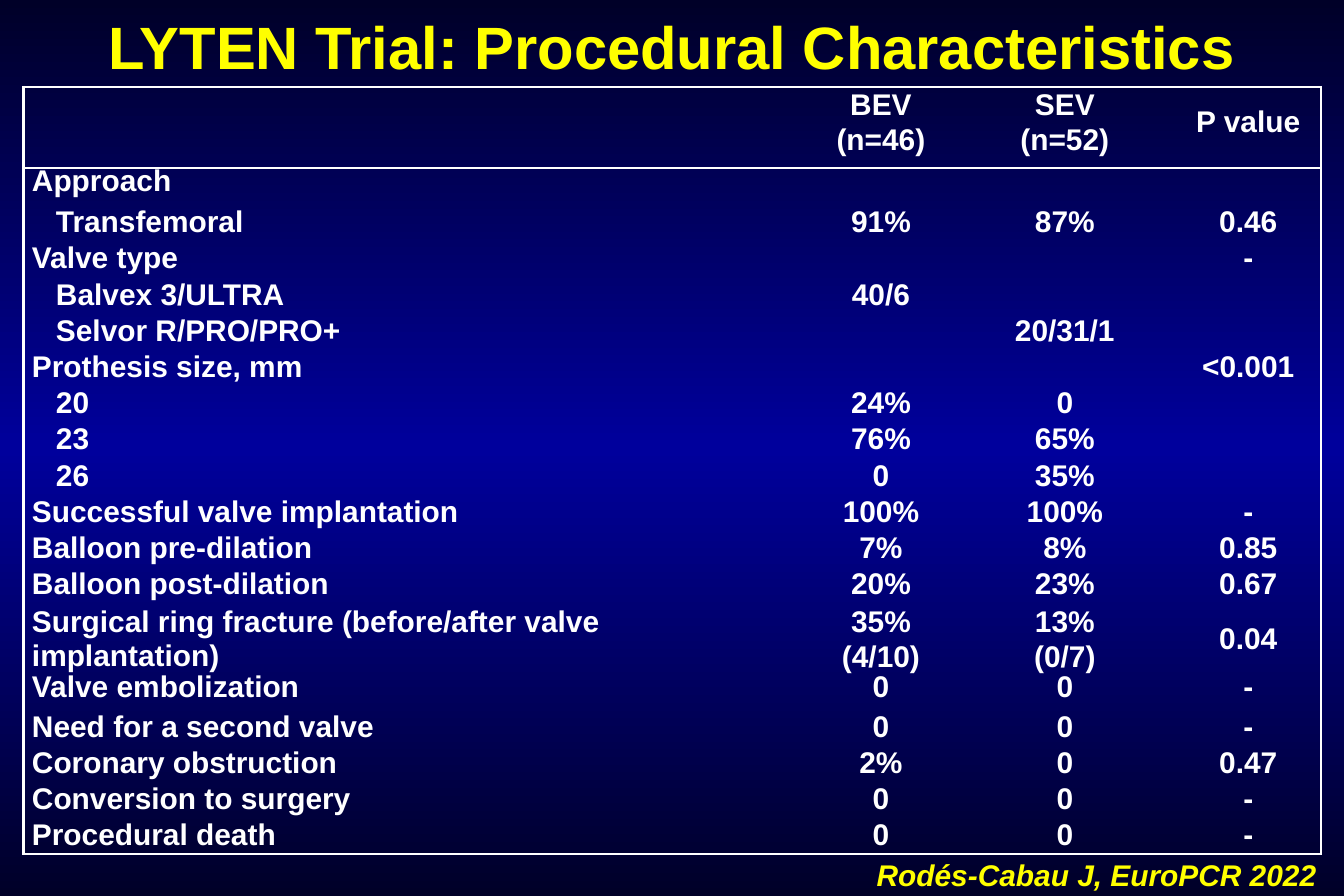
from copy import deepcopy

from lxml import etree
from pptx import Presentation
from pptx.dml.color import RGBColor
from pptx.enum.text import MSO_ANCHOR, PP_ALIGN
from pptx.oxml.ns import qn
from pptx.util import Cm, Pt

LEFT, CENTER = PP_ALIGN.LEFT, PP_ALIGN.CENTER
MIDDLE = MSO_ANCHOR.MIDDLE

TITLE = "LYTEN Trial: Procedural Characteristics"
CITATION = "Rodés-Cabau J, EuroPCR 2022"
HEADER = ("", "BEV\n(n=46)", "SEV\n(n=52)", "P value")
GROUP, ITEM = 0.18, 0.69  # label indents in cm
CHARACTERISTICS = [
    (GROUP, "Approach", "", "", ""),
    (ITEM, "Transfemoral", "91%", "87%", "0.46"),
    (GROUP, "Valve type", "", "", "-"),
    (ITEM, "Balvex 3/ULTRA", "40/6", "", ""),
    (ITEM, "Selvor R/PRO/PRO+", "", "20/31/1", ""),
    (GROUP, "Prothesis size, mm", "", "", "<0.001"),
    (ITEM, "20", "24%", "0", ""),
    (ITEM, "23", "76%", "65%", ""),
    (ITEM, "26", "0", "35%", ""),
    (GROUP, "Successful valve implantation", "100%", "100%", "-"),
    (GROUP, "Balloon pre-dilation", "7%", "8%", "0.85"),
    (GROUP, "Balloon post-dilation", "20%", "23%", "0.67"),
    (GROUP, "Surgical ring fracture (before/after valve implantation)",
     "35%\n(4/10)", "13%\n(0/7)", "0.04"),
    (GROUP, "Valve embolization", "0", "0", "-"),
    (GROUP, "Need for a second valve", "0", "0", "-"),
    (GROUP, "Coronary obstruction", "2%", "0", "0.47"),
    (GROUP, "Conversion to surgery", "0", "0", "-"),
    (GROUP, "Procedural death", "0", "0", "-"),
]
COLUMN_WIDTHS = (15.04, 4.75, 4.52, 3.28)
VALUE_INDENTS = (1.63, 0.18, 0.18)
ROW_HEIGHT = 0.77
SPECIAL_HEIGHTS = {"": 1.72, "Surgical": 1.53, "Valve embolization": 0.7}
TIGHT_ROWS = ("", "Approach", "Valve embolization")
YELLOW, WHITE = "FFFF00", "FFFFFF"
NAVY, BLUE = "000028", "00009C"


def rgb(code):
    return RGBColor.from_string(code)


def style(paragraph, size, color, align, italic=False):
    paragraph.alignment = align
    font = paragraph.font
    font.name, font.size, font.bold, font.italic = "Arial", Pt(size), True, italic
    font.color.rgb = rgb(color)


def add_line(slide, text, box, size, align, italic=False):
    """Add a one-paragraph yellow text box."""
    frame = slide.shapes.add_textbox(*(Cm(length) for length in box)).text_frame
    frame.word_wrap = True
    frame.text = text
    style(frame.paragraphs[0], size, YELLOW, align, italic)


def paint_background(slide):
    fill = slide.background.fill
    fill.gradient()
    fill.gradient_angle = 90
    stop_list = next(slide.element.iter(qn("a:gsLst")))
    stop_list.insert(1, deepcopy(stop_list[0]))
    for stop, position, color in zip(fill.gradient_stops, (0, 0.5, 1), (NAVY, BLUE, NAVY)):
        stop.position = position
        stop.color.rgb = rgb(color)


def set_borders(cell, drawn):
    """Draw the named sides (L, R, T, B) in white and clear the others."""
    properties = cell._tc.get_or_add_tcPr()
    for place, side in enumerate("LRTB"):
        line = etree.Element(qn(f"a:ln{side}"), w=str(Pt(1.5)))
        if side in drawn:
            solid = etree.SubElement(line, qn("a:solidFill"))
            etree.SubElement(solid, qn("a:srgbClr"), val=WHITE)
        else:
            etree.SubElement(line, qn("a:noFill"))
        properties.insert(place, line)


def fill_cell(cell, text, indent, align, tight):
    cell.fill.background()
    cell.margin_left = cell.margin_right = cell.margin_top = cell.margin_bottom = 0
    cell.vertical_anchor = MIDDLE
    cell.text = text
    for number, paragraph in enumerate(cell.text_frame.paragraphs):
        paragraph._p.get_or_add_pPr().set("marL", str(Cm(indent)))
        if number:
            paragraph.space_before = Pt(1)
        elif tight or not text:
            paragraph.line_spacing = Pt(14)
        style(paragraph, 18, WHITE, align)


def add_characteristics(slide):
    rows = [(GROUP, *HEADER), *CHARACTERISTICS]
    heights = [SPECIAL_HEIGHTS.get(label, SPECIAL_HEIGHTS.get(label.split(" ")[0], ROW_HEIGHT))
               for _, label, *_ in rows]
    table = slide.shapes.add_table(
        len(rows), len(COLUMN_WIDTHS), Cm(0.5), Cm(1.85),
        Cm(sum(COLUMN_WIDTHS)), Cm(sum(heights))).table
    table.first_row = table.horz_banding = False
    for column, width in zip(table.columns, COLUMN_WIDTHS):
        column.width = Cm(width)

    last_row, last_column = len(rows) - 1, len(COLUMN_WIDTHS) - 1
    for r, (label_indent, *texts) in enumerate(rows):
        table.rows[r].height = Cm(heights[r])
        for c, (text, indent) in enumerate(zip(texts, (label_indent, *VALUE_INDENTS))):
            cell = table.cell(r, c)
            fill_cell(cell, text, indent, CENTER if c else LEFT, texts[0] in TIGHT_ROWS)
            sides = {"L": c == 0, "R": c == last_column,
                     "T": r in (0, 1), "B": r in (0, last_row)}
            set_borders(cell, [side for side, shown in sides.items() if shown])


def main():
    deck = Presentation()
    deck.slide_width, deck.slide_height = Cm(28.575), Cm(19.05)
    slide = deck.slides.add_slide(deck.slide_layouts[6])
    paint_background(slide)
    add_line(slide, TITLE, (0, 0.08, 28.58, 1.8), 36, CENTER)
    add_characteristics(slide)
    add_line(slide, CITATION, (18.39, 18.08, 10.18, 1.02), 18, LEFT, italic=True)
    deck.save("out.pptx")


if __name__ == "__main__":
    main()
